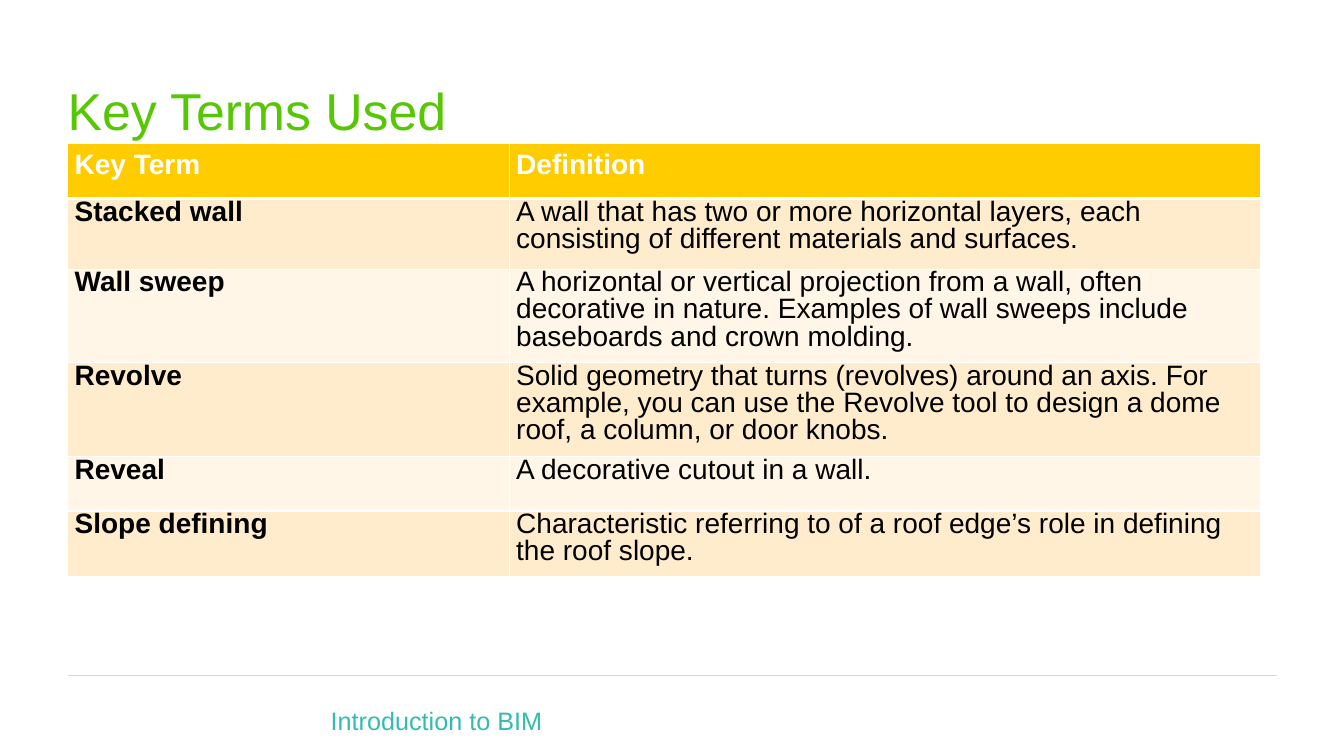
from pptx import Presentation
from pptx.dml.color import RGBColor
from pptx.enum import shapes, text
from pptx.oxml import parse_xml
from pptx.oxml.ns import nsdecls
from pptx.oxml.xmlchemy import OxmlElement
from pptx.util import Inches, Pt

GREEN = RGBColor(0x57, 0xC6, 0x04)
TEAL = RGBColor(0x32, 0xBC, 0xAD)
GREY = RGBColor(0xD8, 0xD8, 0xD8)
GOLD = RGBColor(0xFF, 0xCC, 0x00)
PEACH = RGBColor(0xFF, 0xEC, 0xCC)
CREAM = RGBColor(0xFF, 0xF6, 0xE7)
WHITE = RGBColor(0xFF, 0xFF, 0xFF)
BLACK = RGBColor(0x00, 0x00, 0x00)

FONT = "Arial"
COLUMN_WIDTHS = (4.38, 7.45)
HEADINGS = ("Key Term", "Definition")
# Each term: row height, name, lines of its definition
TERMS = (
    (0.7, "Stacked wall", (
        "A wall that has two or more horizontal layers, each",
        "consisting of different materials and surfaces.")),
    (0.93, "Wall sweep", (
        "A horizontal or vertical projection from a wall, often",
        "decorative in nature. Examples of wall sweeps include",
        "baseboards and crown molding.")),
    (0.93, "Revolve", (
        "Solid geometry that turns (revolves) around an axis. For",
        "example, you can use the Revolve tool to design a dome",
        "roof, a column, or door knobs.")),
    (0.54, "Reveal", ("A decorative cutout in a wall.",)),
    (0.65, "Slope defining", (
        "Characteristic referring to of a roof edge’s role in defining",
        "the roof slope.")),
)
HEADER_HEIGHT = 0.55


def add_run(paragraph, words, size, color, bold=False):
    run = paragraph.add_run()
    run.text = words
    run.font.name = FONT
    run.font.size = Pt(size)
    run.font.bold = bold
    run.font.color.rgb = color


def add_label(slide, left, top, width, height, words, size, color,
              anchor=text.MSO_ANCHOR.TOP, inset_top=0, spacing=None):
    frame = slide.shapes.add_textbox(
        Inches(left), Inches(top), Inches(width), Inches(height)).text_frame
    frame.word_wrap = True
    frame.vertical_anchor = anchor
    frame.margin_left = frame.margin_right = frame.margin_bottom = 0
    frame.margin_top = Inches(inset_top)
    line = frame.paragraphs[0]
    line.line_spacing = spacing
    add_run(line, words, size, color)


def add_footer(slide, left, top, width):
    rule = slide.shapes.add_connector(
        shapes.MSO_CONNECTOR.STRAIGHT, Inches(left), Inches(top),
        Inches(left + width), Inches(top))
    rule.line.color.rgb = GREY
    rule.line.width = Pt(0.75)
    rule._element.spPr.append(OxmlElement("a:effectLst"))
    add_label(slide, left + 2.61, top + 0.16, 3.48, 0.52, "Introduction to BIM",
              18, TEAL, anchor=text.MSO_ANCHOR.MIDDLE, spacing=1.2)


def set_borders(cell, bottom, top):
    """Put white borders round a cell, with widths in points."""
    properties = cell._tc.get_or_add_tcPr()
    widths = (("lnL", 1), ("lnR", 1), ("lnT", top), ("lnB", bottom))
    for position, (side, width) in enumerate(widths):
        properties.insert(position, parse_xml(
            f'<a:{side} {nsdecls("a")} w="{Pt(width)}"><a:solidFill>'
            f'<a:srgbClr val="{WHITE}"/></a:solidFill></a:{side}>'))


def fill_cell(cell, lines, fill, color, bold, inset, anchor):
    cell.fill.solid()
    cell.fill.fore_color.rgb = fill
    cell.vertical_anchor = anchor
    cell.margin_left = cell.margin_right = Inches(0.07)
    cell.margin_top = cell.margin_bottom = Inches(inset)
    frame = cell.text_frame
    for index, words in enumerate(lines):
        line = frame.add_paragraph() if index else frame.paragraphs[0]
        line.line_spacing = Pt(13)
        line.space_after = Pt(6.5)
        add_run(line, words, 20, color, bold)


def add_terms_table(slide, left, top):
    heights = [HEADER_HEIGHT] + [height for height, _, _ in TERMS]
    table = slide.shapes.add_table(
        len(heights), len(COLUMN_WIDTHS), Inches(left), Inches(top),
        Inches(sum(COLUMN_WIDTHS)), Inches(sum(heights))).table
    for column, width in zip(table.columns, COLUMN_WIDTHS):
        column.width = Inches(width)
    for row, height in zip(table.rows, heights):
        row.height = Inches(height)

    for column, heading in enumerate(HEADINGS):
        cell = table.cell(0, column)
        fill_cell(cell, (heading,), GOLD, WHITE, True, 0, text.MSO_ANCHOR.MIDDLE)
        set_borders(cell, bottom=3, top=1)
    for row, (_, term, definition) in enumerate(TERMS, start=1):
        band = PEACH if row % 2 else CREAM
        for column, lines in enumerate(((term,), definition)):
            cell = table.cell(row, column)
            fill_cell(cell, lines, band, BLACK, column == 0, 0.1,
                      text.MSO_ANCHOR.TOP)
            set_borders(cell, bottom=1, top=3 if row == 1 else 1)


def main():
    deck = Presentation()
    deck.slide_width, deck.slide_height = Inches(13.33), Inches(7.5)
    slide = deck.slides.add_slide(deck.slide_layouts[6])
    add_footer(slide, 0.67, 6.7, 12)
    add_label(slide, 0.67, 0.73, 12, 0.83, "Key Terms Used", 37, GREEN,
              inset_top=0.05)
    add_terms_table(slide, 0.67, 1.42)
    deck.save("out.pptx")


if __name__ == "__main__":
    main()
